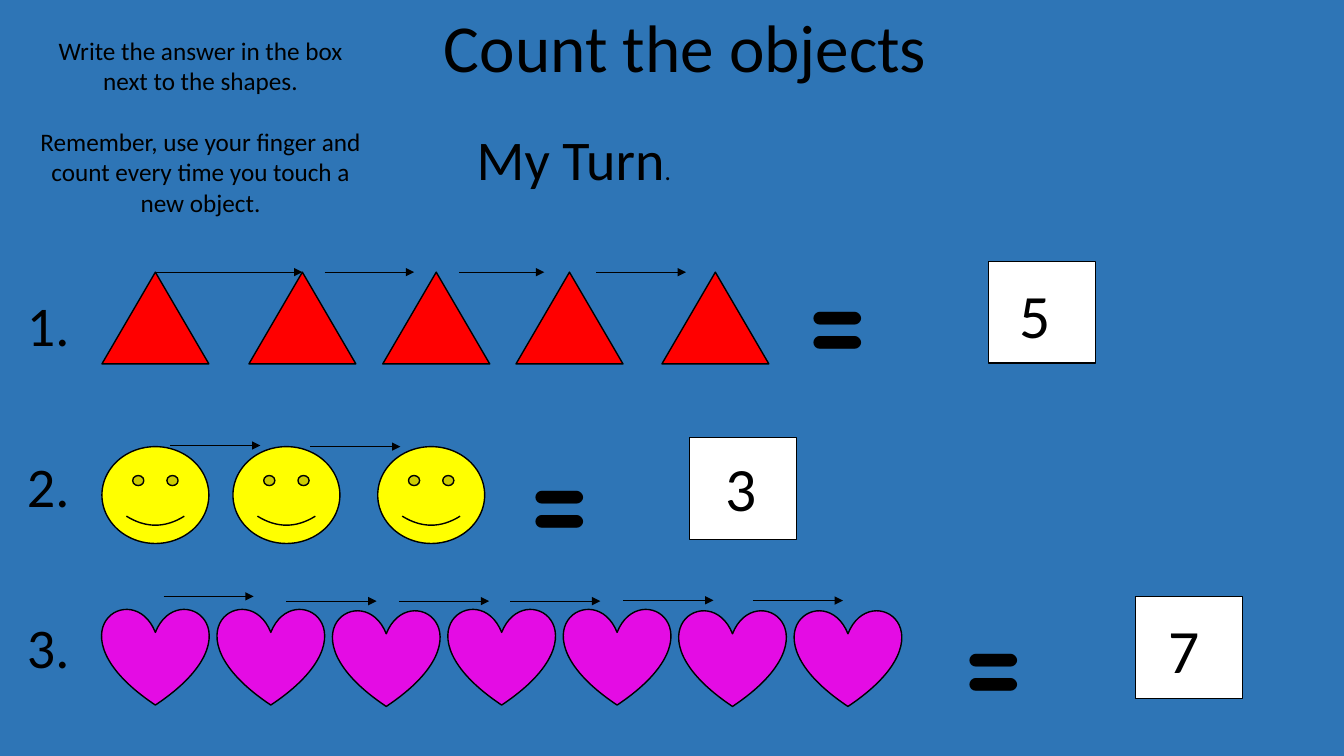
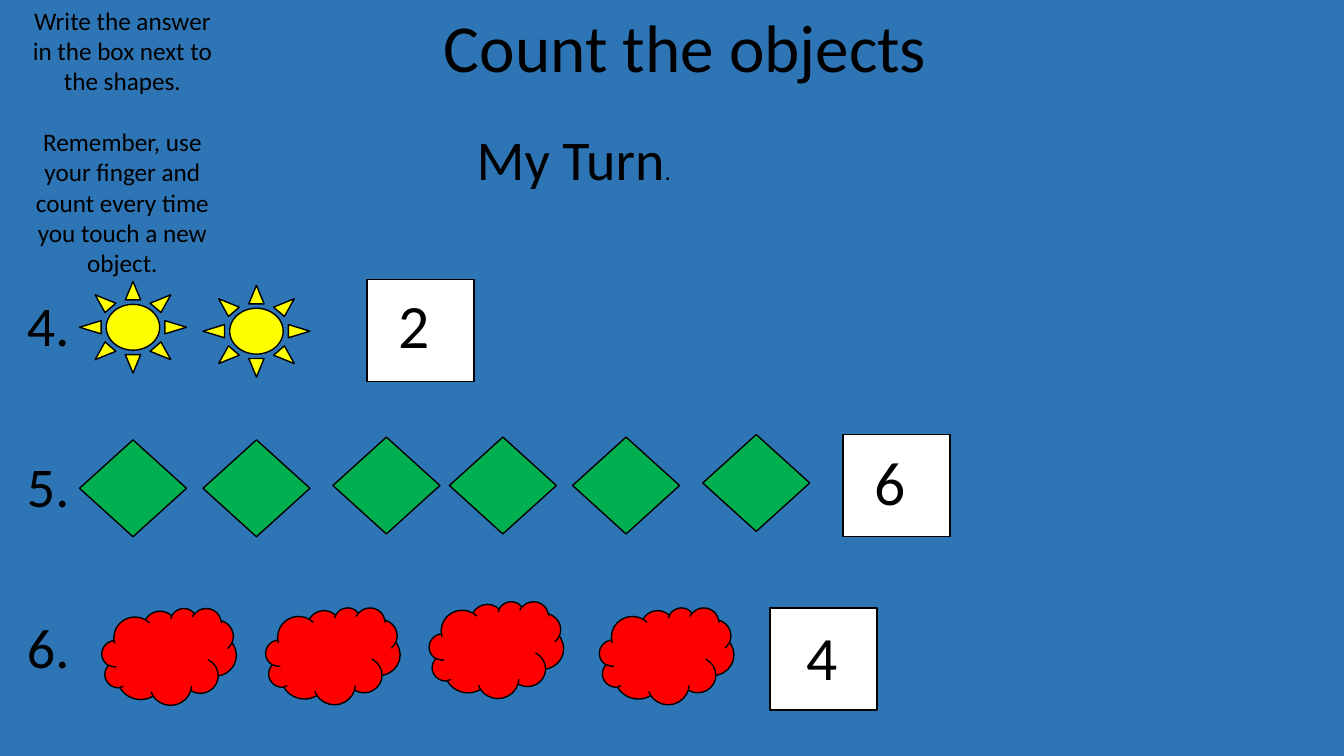
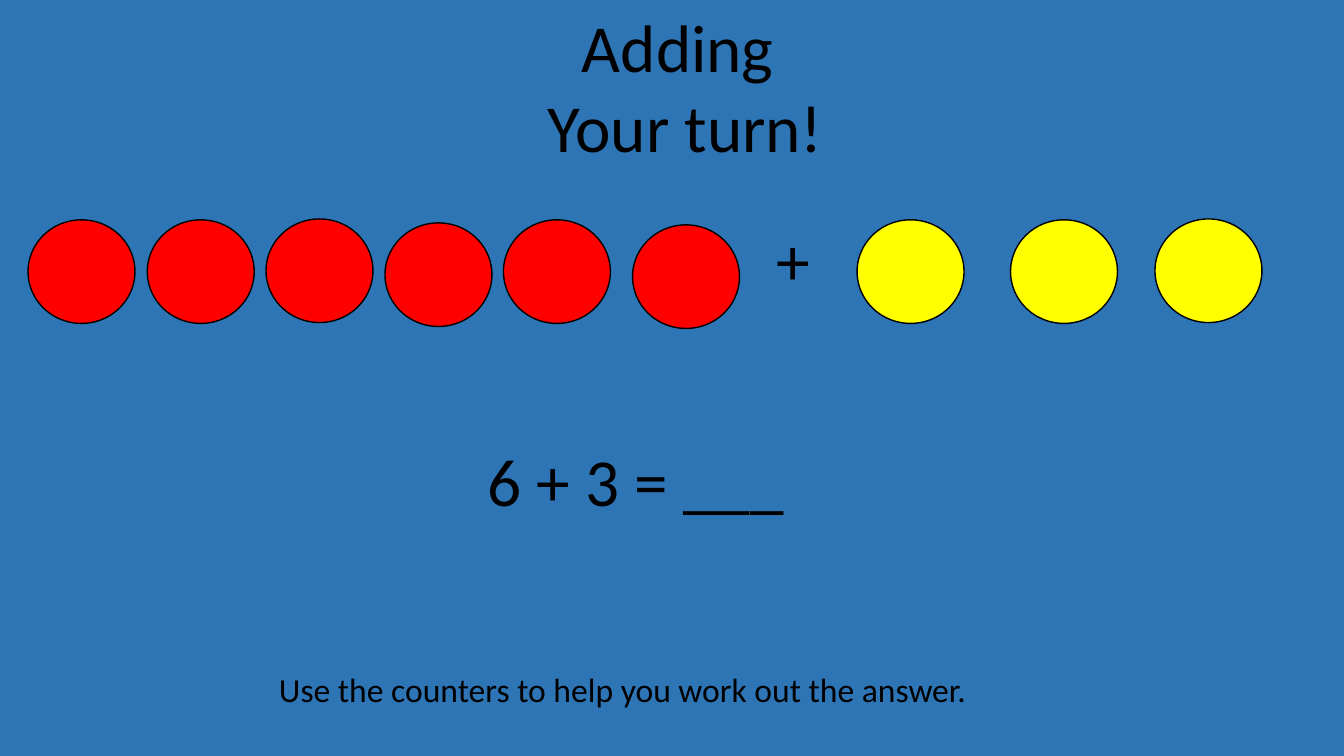
"""Build three counting and adding practice slides."""
from lxml import etree
from pptx import Presentation
from pptx.dml.color import RGBColor
from pptx.enum import shapes, text
from pptx.oxml import ns
from pptx.util import Pt

BLUE = RGBColor(0x2E, 0x75, 0xB6)
BLACK = RGBColor(0, 0, 0)
WHITE = RGBColor(255, 255, 255)
RED = RGBColor(255, 0, 0)
YELLOW = RGBColor(255, 255, 0)
PINK = RGBColor(0xE4, 0x0C, 0xE4)
GREEN = RGBColor(0, 0xB0, 0x50)
KIND = shapes.MSO_SHAPE
LEFT, MID = text.PP_ALIGN.LEFT, text.PP_ALIGN.CENTER
WIDE = 76.4


def draw(slide, kind, fill, *spot):
    shape = slide.shapes.add_shape(kind, *map(Pt, spot))
    shape.shadow.inherit = False
    shape.fill.solid()
    shape.fill.fore_color.rgb = fill
    shape.line.color.rgb = BLACK
    shape.line.width = Pt(1)
    return shape


def write(slide, spot, paras, align=LEFT, gap=0, face="Calibri", bold=False, box=None):
    box = box or slide.shapes.add_textbox(0, 0, 0, 0)
    box.left, box.top, box.width, box.height = map(Pt, spot)
    frame = box.text_frame
    frame.word_wrap = True
    frame.auto_size = text.MSO_AUTO_SIZE.NONE
    frame.vertical_anchor = text.MSO_ANCHOR.TOP
    for i, runs in enumerate(paras):
        para = frame.add_paragraph() if i else frame.paragraphs[0]
        para.alignment = align
        para.space_before = Pt(gap if i else 0)
        for words, size in runs:
            run = para.add_run()
            run.text = words
            font = run.font
            font.name, font.size, font.bold = face, Pt(size), bold
            font.color.rgb = BLACK


deck = Presentation()
deck.slide_width, deck.slide_height = Pt(960), Pt(540)
back = deck.slide_master.background.fill
back.solid()
back.fore_color.rgb = BLUE

heads = [["Count the objects"], ["Count the objects"], ["Adding ", "Your turn!"]]
pages = []
for lines in heads:
    page = deck.slides.add_slide(deck.slide_layouts[5])
    tall = 7.2 + 58.4 * len(lines)
    write(page, (88.6, 0, 802, tall), [[(line, 48)] for line in lines], MID,
          box=page.shapes.title)
    pages.append(page)

tips = [
    [("Write the answer in the box next to the shapes.", 18)],
    [("Remember, use your finger and count every time you touch a new object.", 18)],
]
spots = [(17.3, 21.6, 252, 138.2), (12.2, 0, 150.5, 203.8)]
rows = [
    [
        (KIND.ISOSCELES_TRIANGLE, RED, WIDE, 65.5,
         [(x, 194.4) for x in (72.8, 177.8, 273.4, 368.6, 472.8)],
         (706.2, 186.6), "5", (721.4, 194.4), (568.8, 159.8)),
        (KIND.SMILEY_FACE, YELLOW, WIDE, 69.2,
         [(x, 319) for x in (72.8, 166.4, 269.8)],
         (492.4, 312.4), "3", (511.2, 318.2), (370.8, 288)),
        (KIND.HEART, PINK, WIDE, 69.2,
         [(72.8 + 82.45 * i, 435.4 if i in (2, 5, 6) else 434.4) for i in range(7)],
         (811, 426.2), "7", (827.3, 433.4), (680.4, 404.6)),
    ],
    [
        (KIND.SUN, YELLOW, WIDE, 65.5, [(56.8, 201), (145, 203.8)],
         (262.2, 199.6), "2", (277.9, 201.6), None),
        (KIND.DIAMOND, GREEN, WIDE, 69.2,
         [(56.8, 314.2), (145, 314.2), (237.8, 312.2), (321, 312.2),
          (409, 312.2), (502, 310.4)],
         (602.2, 310.6), "6", (617.8, 313.9), None),
        (KIND.CLOUD, RED, 96, 69.2,
         [(72.8, 434.4), (189.8, 434), (306.6, 429.6), (428.2, 434)],
         (550, 434.4), "4", (568.8, 438.5), None),
    ],
]

first = []
count = 0
for page, spot, group in zip(pages, spots, rows):
    write(page, spot, tips, MID, gap=22)
    write(page, (333.4, 85.7, 293.8, 55.4), [[("My Turn", 40), (".", 18)]])
    for i, (kind, fill, wide, tall, places, box, total, mark, equals) in enumerate(group):
        count += 1
        write(page, (12.2, 203.8 + 115.2 * i, 60.5, 55.4), [[(f"{count}.", 40)]])
        items = [draw(page, kind, fill, x, y, wide, tall) for x, y in places]
        first = first or items
        draw(page, KIND.RECTANGLE, WHITE, *box, WIDE, 72.8)
        write(page, (*mark, 50, 60.5), [[(total, 44)]])
        if equals:
            write(page, (*equals, 203.8, 123.8), [[("=", 96)]], face="Comic Neue", bold=True)

arrows = [
    (111, 194.4, 105), (231.8, 194.4, 64), (327.8, 194.4, 61), (426, 194.4, 64),
    (121.6, 318.2, 64.4), (221.6, 319, 64.4),
    (116.8, 426, 64.4), (204.6, 429.4, 64.4), (285, 429.4, 64.4),
    (364.4, 429.4, 64.4), (445.2, 428.8, 64.4), (537.8, 429, 64.4),
]
for i, (x, y, span) in enumerate(arrows):
    arrow = pages[0].shapes.add_connector(
        shapes.MSO_CONNECTOR.STRAIGHT, Pt(x), Pt(y), Pt(x + span), Pt(y))
    if i == 0:
        arrow.begin_connect(first[0], 0)
        arrow.end_connect(first[1], 0)
    arrow.line.color.rgb = BLACK
    arrow.line.width = Pt(0.5)
    etree.SubElement(arrow.line._get_or_add_ln(), ns.qn("a:tailEnd"), type="triangle")
    etree.SubElement(arrow._element.spPr, ns.qn("a:effectLst"))

page = pages[2]
reds = [(20, 157), (105.2, 157), (190, 156.4), (275, 159.2), (359.6, 157), (451.8, 160.6)]
golds = [(612.2, 157), (721.8, 157), (825, 156.4)]
for fill, places in ((RED, reds), (YELLOW, golds)):
    for x, y in places:
        draw(page, KIND.OVAL, fill, x, y, WIDE, 74)
write(page, (547.9, 152.6, 123.8, 65.5), [[("+", 48)]])
write(page, (341.3, 310.3, 277.9, 65.5), [[("6 + 3 = ___", 48)]])
write(page, (192.2, 474.5, 632.9, 36),
      [[("Use the counters to help you work out the answer.", 24)]])

deck.save("out.pptx")
